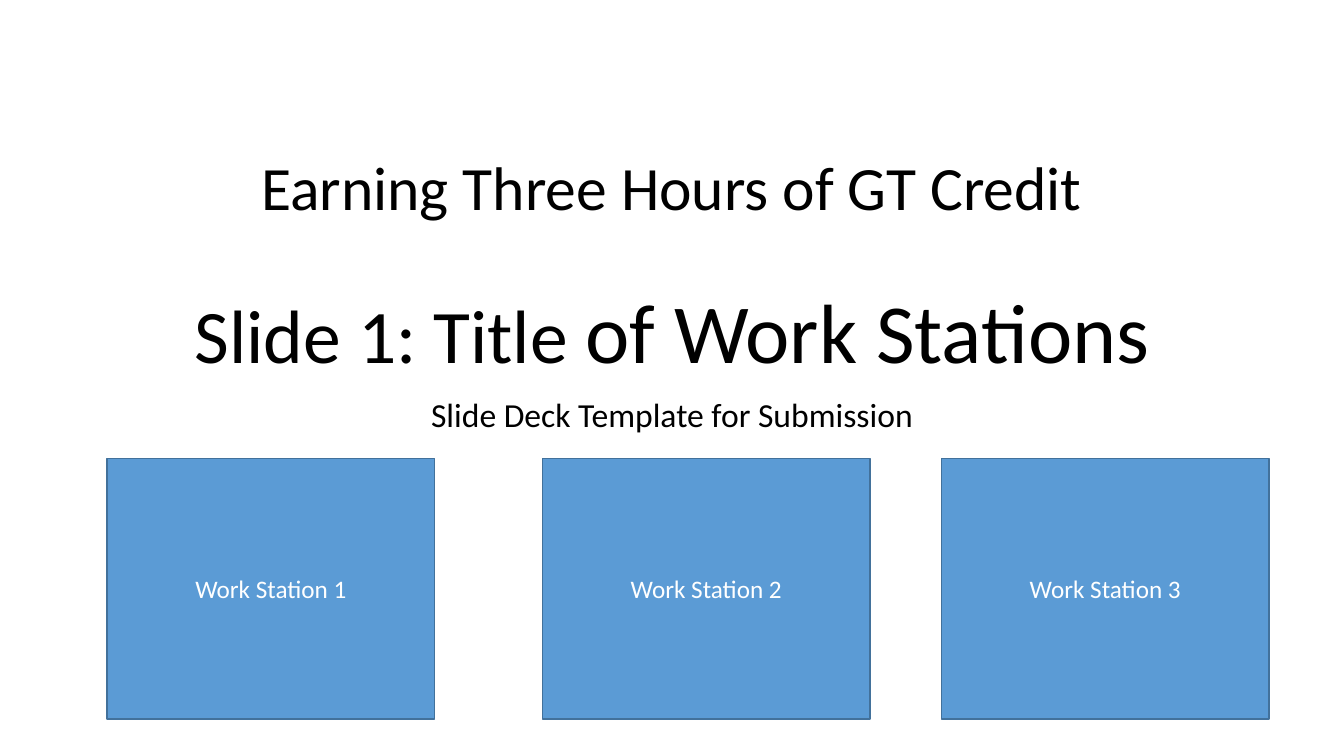
from pptx import Presentation
from pptx.dml.color import RGBColor
from pptx.enum.shapes import MSO_SHAPE as Shape
from pptx.enum.text import MSO_ANCHOR as Anchor, PP_ALIGN as Align
from pptx.util import Pt

FONT = "Calibri"
BLACK, WHITE = "000000", "FFFFFF"
STATION_FILL, STATION_LINE = "5B9BD5", "42719B"


def color(hex_string):
    return RGBColor.from_string(hex_string)


def add_runs(para, runs, hex_string, line_spacing=1.0):
    para.alignment = Align.CENTER
    para.line_spacing = line_spacing
    for text, size in runs:
        span = para.add_run()
        span.text = text
        span.font.name = FONT
        span.font.size = Pt(size)
        span.font.color.rgb = color(hex_string)


def add_text_frame(page, left, top, width, height, anchor):
    box = page.shapes.add_textbox(Pt(left), Pt(top), Pt(width), Pt(height))
    frame = box.text_frame
    frame.word_wrap = True
    frame.vertical_anchor = anchor
    return frame


def add_heading(page, left, top, width, height):
    subtitle_height, gap = 31.5, 7
    title_height = height - subtitle_height - gap
    title = add_text_frame(page, left, top, width, title_height, Anchor.BOTTOM)
    add_runs(title.paragraphs[0], [("Earning Three Hours of GT Credit", 44)], BLACK, 0.9)
    para = title.add_paragraph()
    para.space_before = Pt(48)
    add_runs(para, [("Slide 1: Title ", 54), ("of Work Stations", 60)], BLACK, 0.9)

    subtitle_top = top + title_height + gap
    subtitle = add_text_frame(page, left, subtitle_top, width, subtitle_height, Anchor.TOP)
    add_runs(subtitle.paragraphs[0], [("Slide Deck Template for Submission", 24)], BLACK, 0.8)


def add_stations(page, left, top, width, height):
    station_width = 234
    offsets = (0, 311, width - station_width)
    for number, offset in enumerate(offsets, 1):
        station = page.shapes.add_shape(
            Shape.RECTANGLE, Pt(left + offset), Pt(top), Pt(station_width), Pt(height))
        station.shadow.inherit = False
        station.fill.solid()
        station.fill.fore_color.rgb = color(STATION_FILL)
        station.line.color.rgb = color(STATION_LINE)
        station.line.width = Pt(1)
        station.text_frame.vertical_anchor = Anchor.MIDDLE
        add_runs(station.text_frame.paragraphs[0], [(f"Work Station {number}", 18)], WHITE)


def main():
    deck = Presentation()
    deck.slide_width, deck.slide_height = Pt(960), Pt(540)
    page = deck.slides.add_slide(deck.slide_layouts[6])
    add_heading(page, 120, 88.5, 720, 226.5)
    add_stations(page, 76.5, 327.5, 830, 186)
    deck.save("out.pptx")


if __name__ == "__main__":
    main()
